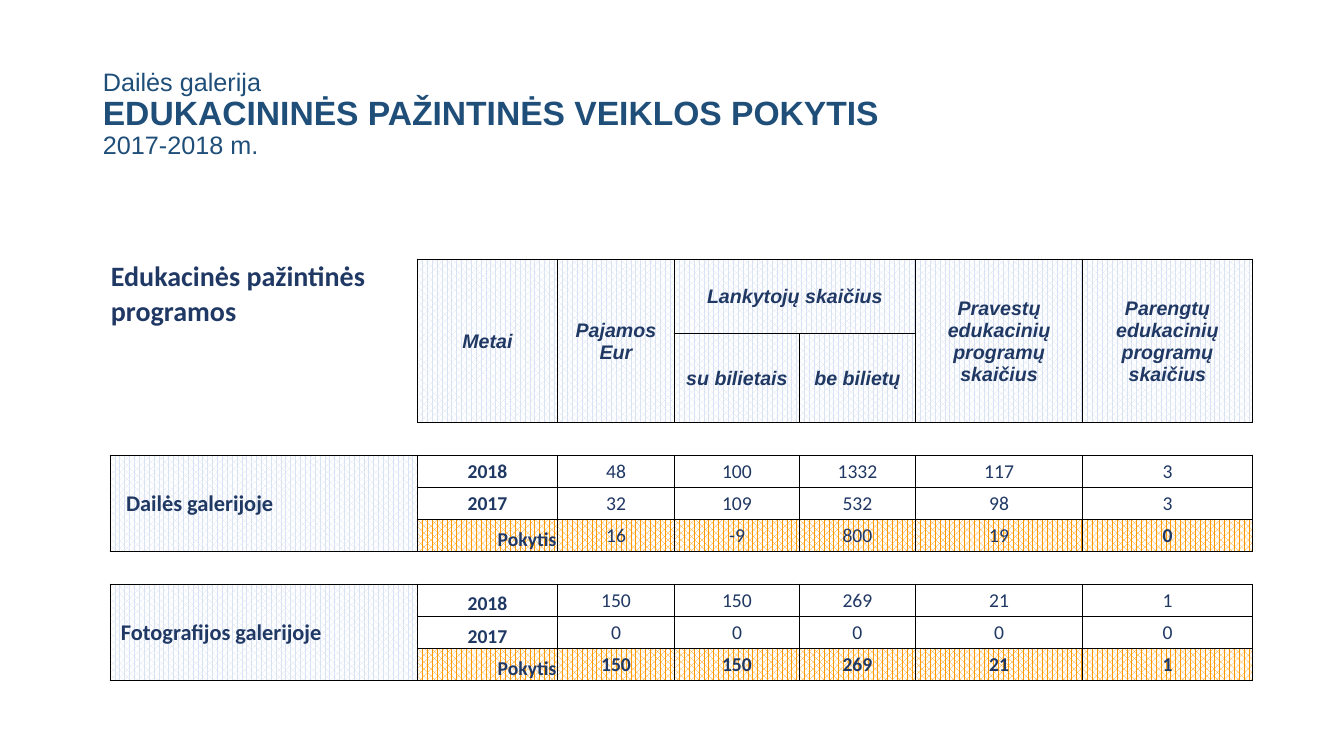
from pptx import Presentation
from pptx.dml.color import RGBColor
from pptx.enum.dml import MSO_PATTERN as Pattern
from pptx.enum.text import MSO_ANCHOR as Anchor, MSO_AUTO_SIZE as Fit, PP_ALIGN as Align
from pptx.oxml.ns import qn
from pptx.util import Inches, Pt
from lxml.etree import SubElement

BLUE = RGBColor(0x1F, 0x4E, 0x79)
NAVY = RGBColor(0x20, 0x38, 0x64)
PALE = RGBColor(0xDA, 0xE3, 0xF3)
AMBER = RGBColor(0xFF, 0x99, 0x00)
WHITE = RGBColor(0xFF, 0xFF, 0xFF)
PLAIN = "{2D5ABB26-0587-4C30-8999-92F81FD0307C}"

COLS = [3.05, 1.39, 1.16, 1.24, 1.15, 1.66, 1.68]
ROWS = [0.74, 0.49] + [0.32] * 8
GAPS = (2, 6)

# row, column, last row, last column, text
HEADS = [
    (0, 1, 1, 1, "Metai"),
    (0, 2, 1, 2, "Pajamos\nEur"),
    (0, 3, 0, 4, "Lankytojų skaičius"),
    (1, 3, 1, 3, "su bilietais"),
    (1, 4, 1, 4, "be bilietų"),
    (0, 5, 1, 5, "Pravestų edukacinių programų skaičius"),
    (0, 6, 1, 6, "Parengtų edukacinių programų skaičius"),
]
# first row, label, label indent, year anchor, bold change columns, values
BLOCKS = [
    (3, "Dailės galerijoje", 0.16, Anchor.MIDDLE, {6},
     [["2018", "48", "100", "1332", "117", "3"],
      ["2017", "32", "109", "532", "98", "3"],
      ["Pokytis", "16", "-9", "800", "19", "0"]]),
    (7, "Fotografijos galerijoje", 0.11, Anchor.BOTTOM, {2, 3, 4, 5, 6},
     [["2018", "150", "150", "269", "21", "1"],
      ["2017", "0", "0", "0", "0", "0"],
      ["Pokytis", "150", "150", "269", "21", "1"]]),
]


def style(par, size, color, name, bold=False, italic=False):
    for run in par.runs:
        font = run.font
        font.size, font.name = Pt(size), name
        font.bold, font.italic = bold, italic
        font.color.rgb = color


def put(cell, text, size=14, name="Calibri", align=Align.CENTER,
        anchor=Anchor.MIDDLE, bold=False, italic=False):
    cell.text_frame.text = text
    cell.vertical_anchor = anchor
    for par in cell.text_frame.paragraphs:
        par.alignment = align
        style(par, size, NAVY, name, bold, italic)


def shade(cell, color):
    cell.fill.patterned()
    cell.fill.pattern = Pattern.PERCENT_70
    cell.fill.fore_color.rgb = color
    cell.fill.back_color.rgb = WHITE


def edge(cell, sides):
    props = cell._tc.get_or_add_tcPr()
    for side in "LRTB":
        line = SubElement(props, qn("a:ln" + side), w=str(Pt(0.5)))
        if side in sides:
            fill = SubElement(line, qn("a:solidFill"))
            SubElement(fill, qn("a:srgbClr"), val="000000")
        else:
            SubElement(line, qn("a:noFill"))


def sides(row, col):
    if row in GAPS:
        return "B" if (row, col) == (2, 0) else "TB"
    return "R" if row < 2 and col == 0 else "LRTB"


# Title block
def add_title(slide, left, top, width, height):
    title = slide.shapes.title
    title.left, title.top = Inches(left), Inches(top)
    title.width, title.height = Inches(width), Inches(height)
    frame = title.text_frame
    frame.text = "Dailės galerija\nEDUKACININĖS PAŽINTINĖS VEIKLOS POKYTIS\n2017-2018 m."
    frame.auto_size, frame.word_wrap = Fit.NONE, True
    frame.vertical_anchor = Anchor.BOTTOM
    for par, size in zip(frame.paragraphs, (18, 24, 18)):
        par.alignment, par.line_spacing = Align.LEFT, 0.9
        par.space_before = Pt(0)
        style(par, size, BLUE, "Arial", bold=size == 24)


# Empty grid with borders
def add_grid(slide, left, top):
    frame = slide.shapes.add_table(
        len(ROWS), len(COLS), Inches(left), Inches(top),
        Inches(sum(COLS)), Inches(sum(ROWS)))
    table = frame.table
    table.first_row = table.horz_banding = False
    table._tbl.tblPr.find(qn("a:tableStyleId")).text = PLAIN
    for col, width in zip(table.columns, COLS):
        col.width = Inches(width)
    for r, height in enumerate(ROWS):
        table.rows[r].height = Inches(height)
        for c in range(len(COLS)):
            cell = table.cell(r, c)
            cell.margin_left = cell.margin_right = cell.margin_top = Inches(0.01)
            cell.margin_bottom = 0
            edge(cell, sides(r, c))
    return table


# Column heads
def fill_heads(table):
    table.cell(0, 0).merge(table.cell(1, 0))
    put(table.cell(0, 0), "Edukacinės pažintinės programos", 20,
        align=Align.LEFT, anchor=Anchor.TOP, bold=True)
    for row, col, last_row, last_col, text in HEADS:
        cell = table.cell(row, col)
        if (row, col) != (last_row, last_col):
            cell.merge(table.cell(last_row, last_col))
        put(cell, text, name="Arial", bold=True, italic=True)
        shade(cell, PALE)


# One gallery: label, two years and the change
def fill_block(table, first, label, indent, anchor, strong, values):
    head = table.cell(first, 0)
    head.merge(table.cell(first + 2, 0))
    put(head, label, 16, align=Align.LEFT, bold=True)
    head.margin_left = Inches(indent)
    shade(head, PALE)
    for r, line in enumerate(values):
        change = r == 2
        for c, text in enumerate(line, 1):
            cell = table.cell(first + r, c)
            if c == 1:
                put(cell, text, bold=True,
                    align=Align.RIGHT if change else Align.CENTER,
                    anchor=Anchor.BOTTOM if change else anchor)
            else:
                put(cell, text, bold=change and c in strong)
            if change:
                shade(cell, AMBER)


def main():
    deck = Presentation()
    deck.slide_width, deck.slide_height = Inches(13.33), Inches(7.5)
    slide = deck.slides.add_slide(deck.slide_layouts[5])
    add_title(slide, 0.92, 0.5, 11.2, 1.14)
    table = add_grid(slide, 1.09, 2.57)
    fill_heads(table)
    for block in BLOCKS:
        fill_block(table, *block)
    deck.save("out.pptx")


if __name__ == "__main__":
    main()
